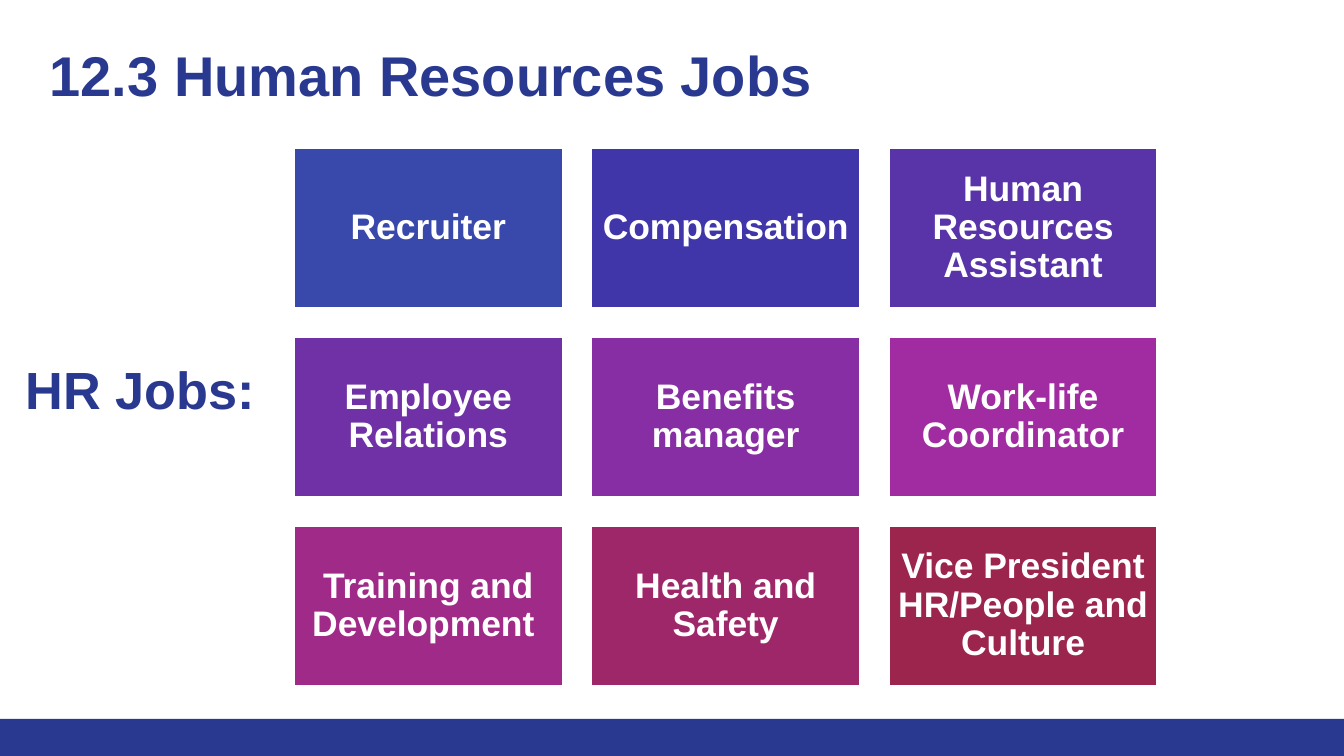
from pptx import Presentation
from pptx.dml.color import RGBColor
from pptx.enum.shapes import MSO_SHAPE as Shape
from pptx.enum.text import MSO_ANCHOR as Anchor, PP_ALIGN as Align
from pptx.util import Cm, Pt

NAVY = "2A3990"
WHITE = "FFFFFF"
JOBS = [
    ("Recruiter", "3949AB"),
    ("Compensation", "4036A9"),
    ("Human Resources Assistant", "5834A8"),
    ("Employee Relations", "7031A6"),
    ("Benefits manager", "882EA4"),
    ("Work-life Coordinator", "A12CA2"),
    ("Training and Development ", "A02A87"),
    ("Health and Safety", "9E276A"),
    ("Vice President HR/People and Culture", "9C254D"),
]


def color(hex_string):
    return RGBColor.from_string(hex_string)


def write(frame, text, size, hue, inset):
    """Fill a text frame with one bold paragraph and return that paragraph."""
    frame.word_wrap = True
    frame.margin_left = frame.margin_right = Cm(inset)
    frame.margin_top = frame.margin_bottom = Cm(inset)
    frame.text = text
    paragraph = frame.paragraphs[0]
    font = paragraph.runs[0].font
    font.name, font.size, font.bold = "Arial", Pt(size), True
    font.color.rgb = color(hue)
    return paragraph


def add_block(slide, box, fill):
    block = slide.shapes.add_shape(Shape.RECTANGLE, *map(Cm, box))
    block.shadow.inherit = False
    block.fill.solid()
    block.fill.fore_color.rgb = color(fill)
    block.line.fill.background()
    return block


def add_heading(slide, box, text, size):
    heading = slide.shapes.add_textbox(*map(Cm, box))
    write(heading.text_frame, text, size, NAVY, 0.25)


def add_job_card(slide, box, job, fill):
    card = add_block(slide, box, fill)
    card.line.color.rgb = color(WHITE)
    card.line.width = Pt(2)
    card.text_frame.vertical_anchor = Anchor.MIDDLE
    label = write(card.text_frame, job, 19, WHITE, 0.19)
    label.alignment = Align.CENTER
    label.line_spacing = 0.9


def add_job_grid(slide, box, columns=3, gap=0.51):
    left, top, width, height = box
    rows = len(JOBS) // columns
    card_width = (width - gap * (columns - 1)) / columns
    card_height = (height - gap * (rows - 1)) / rows
    for index, (job, fill) in enumerate(JOBS):
        row, column = divmod(index, columns)
        card_box = (left + column * (card_width + gap),
                    top + row * (card_height + gap),
                    card_width, card_height)
        add_job_card(slide, card_box, job, fill)


def main():
    deck = Presentation()
    deck.slide_width, deck.slide_height = Cm(25.4), Cm(14.29)
    slide = deck.slides.add_slide(deck.slide_layouts[6])
    add_block(slide, (0, 13.59, 25.4, 0.7), NAVY)
    add_heading(slide, (0.69, 0.51, 23.37, 2.26), "12.3 Human Resources Jobs", 30)
    add_heading(slide, (0.23, 6.5, 23.37, 1.3), "HR Jobs:", 28)
    add_job_grid(slide, (5.54, 2.78, 16.35, 10.2))
    deck.save("out.pptx")


if __name__ == "__main__":
    main()
